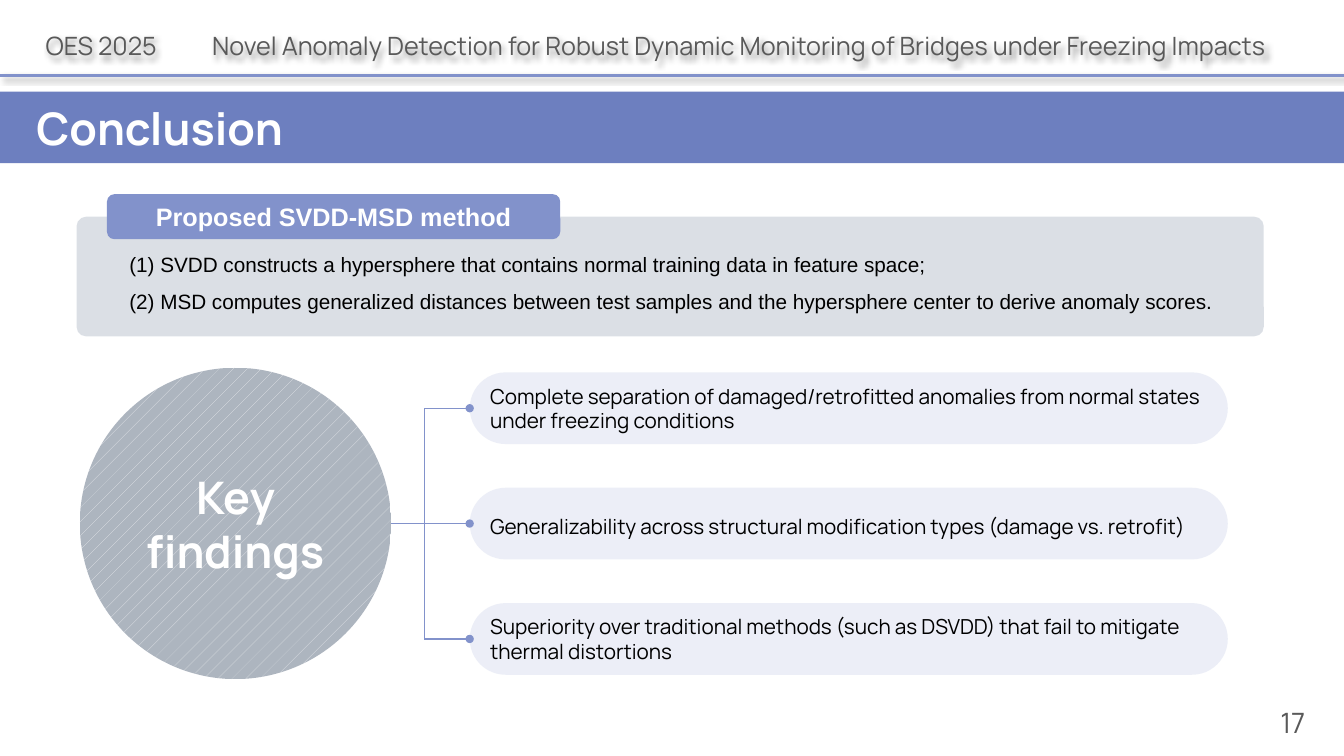
from lxml import etree
from pptx import Presentation
from pptx import util as u
from pptx.dml import color as c
from pptx.enum import dml, shapes, text
from pptx.oxml import ns

Pt = u.Pt
WHITE = c.RGBColor(0xFF, 0xFF, 0xFF)
BLACK = c.RGBColor(0x00, 0x00, 0x00)
GREY = c.RGBColor(0x59, 0x59, 0x59)
BAND = c.RGBColor(0x49, 0x60, 0xB0)
NAVY = c.RGBColor(0x10, 0x2C, 0x53)
PERIWINKLE = c.RGBColor(0x82, 0x92, 0xCB)
STRIPE = c.RGBColor(0xE4, 0xE6, 0xEA)
DISC = c.RGBColor(0xAD, 0xB5, 0xBF)

SLIDE_WIDTH = 960
PILL_LEFT, PILL_TOP, PILL_PITCH = 335.5, 266, 82.4
PILL_WIDTH, PILL_HEIGHT = 541.5, 51.2
SPINE_X = 303.1
DISC_EDGE = 270

METHOD = [
    "(1) SVDD constructs a hypersphere that contains normal training data in feature space;",
    "(2) MSD computes generalized distances between test samples and the hypersphere center "
    "to derive anomaly scores.",
]
FINDINGS = [
    ("Complete separation of damaged/retrofitted anomalies from normal states "
     "under freezing conditions", 1),
    ("Generalizability across structural modification types (damage vs. retrofit)", 1.2),
    ("Superiority over traditional methods (such as DSVDD) that fail to mitigate "
     "thermal distortions", 1),
]


def add_element(parent, tag, **attributes):
    return etree.SubElement(parent, ns.qn(tag), attributes)


def place(shape, left, top, width, height):
    shape.left, shape.top = Pt(left), Pt(top)
    shape.width, shape.height = Pt(width), Pt(height)


def fill_solid(shape, color, opacity=100):
    shape.fill.solid()
    shape.fill.fore_color.rgb = color
    if opacity < 100:
        tint = shape.element.spPr.find(ns.qn("a:solidFill"))[0]
        add_element(tint, "a:alpha", val=str(opacity * 1000))


def set_frame(shape, anchor, insets=(7.2, 3.6, 7.2, 3.6)):
    frame = shape.text_frame
    frame.auto_size = text.MSO_AUTO_SIZE.NONE
    frame.word_wrap = True
    frame.vertical_anchor = anchor
    frame.margin_left, frame.margin_top, frame.margin_right, frame.margin_bottom = map(Pt, insets)
    return frame


def format_para(para, size, color, font="Manrope", bold=False,
                align=text.PP_ALIGN.LEFT, spacing=1):
    para.alignment = align
    para.line_spacing = spacing
    para.space_before = Pt(0)
    for span in para.runs:
        span.font.name = font
        span.font.size = Pt(size)
        span.font.bold = bold
        span.font.color.rgb = color


def add_panel(page, kind, left, top, width, height, adjustment=None):
    panel = page.shapes.add_shape(kind, Pt(left), Pt(top), Pt(width), Pt(height))
    panel.shadow.inherit = False
    panel.line.fill.background()
    if adjustment is not None:
        panel.adjustments[0] = adjustment
    return panel


def add_label(page, wording, left, top, width, height, size, align, insets=(0, 0, 0, 0)):
    box = page.shapes.add_textbox(Pt(left), Pt(top), Pt(width), Pt(height))
    frame = set_frame(box, text.MSO_ANCHOR.BOTTOM, insets)
    frame.text = wording
    format_para(frame.paragraphs[0], size, GREY, align=align)
    return box


def cast_shadow(effects):
    shadow = add_element(effects, "a:outerShdw", blurRad=str(Pt(4)), dist=str(Pt(3)),
                         dir="2700000", algn="tl", rotWithShape="0")
    shade = add_element(shadow, "a:srgbClr", val="000000")
    add_element(shade, "a:alpha", val="40000")


def add_line(page, x1, y1, x2, y2, weight=1, dot=False):
    line = page.shapes.add_connector(shapes.MSO_CONNECTOR.STRAIGHT, Pt(x1), Pt(y1), Pt(x2), Pt(y2))
    line.line.color.rgb = PERIWINKLE
    line.line.width = Pt(weight)
    properties = line.element.spPr
    if dot:
        add_element(properties.find(ns.qn("a:ln")), "a:headEnd", type="oval")
    return add_element(properties, "a:effectLst")


def add_header(page):
    header = add_label(page, "OES 2025\tNovel Anomaly Detection for Robust Dynamic Monitoring "
                       "of Bridges under Freezing Impacts",
                       26.6, 10, 890, 33, 18, text.PP_ALIGN.LEFT, (6, 0, 0, 0))
    properties = header.text_frame.paragraphs[0]._p.get_or_add_pPr()
    stops = add_element(properties, "a:tabLst")
    add_element(stops, "a:tab", pos=str(Pt(119)), algn="l")
    cast_shadow(add_element(header.element.spPr, "a:effectLst"))
    cast_shadow(add_line(page, 0, 54, SLIDE_WIDTH, 54, weight=2))


def add_title(page):
    title = page.shapes.title
    place(title, 0, 65.5, SLIDE_WIDTH, 51.1)
    fill_solid(title, BAND, 80)
    frame = set_frame(title, text.MSO_ANCHOR.MIDDLE, (26, 3.6, 7.2, 3.6))
    frame.text = "Conclusion"
    format_para(frame.paragraphs[0], 32, WHITE, bold=True)


def add_method(page):
    panel = add_panel(page, shapes.MSO_SHAPE.ROUNDED_RECTANGLE, 54.7, 154.8, 848, 85.5, 0.08)
    fill_solid(panel, NAVY, 15)

    body = page.placeholders[1]
    panel.element.addnext(body.element)
    place(body, 92.4, 154.8, 805, 85.5)
    frame = set_frame(body, text.MSO_ANCHOR.MIDDLE, (0, 3.6, 0, 3.6))
    frame.text = "\n".join(METHOD)
    for para in frame.paragraphs:
        properties = para._p.get_or_add_pPr()
        properties.set("marL", "0")
        properties.set("indent", "0")
        add_element(properties, "a:buNone")
        format_para(para, 14.8, BLACK, font="Arial", spacing=1.5)

    tab = add_panel(page, shapes.MSO_SHAPE.ROUNDED_RECTANGLE, 76.4, 138.7, 323.8, 32.2)
    fill_solid(tab, PERIWINKLE)
    frame = set_frame(tab, text.MSO_ANCHOR.MIDDLE)
    frame.text = "Proposed SVDD-MSD method"
    format_para(frame.paragraphs[0], 18, WHITE, "Arial", True, text.PP_ALIGN.CENTER)


def add_pill(page, wording, spacing, top):
    pill = add_panel(page, shapes.MSO_SHAPE.ROUNDED_RECTANGLE,
                     PILL_LEFT, top, PILL_WIDTH, PILL_HEIGHT, 0.5)
    fill_solid(pill, PERIWINKLE, 15)
    frame = set_frame(pill, text.MSO_ANCHOR.MIDDLE, (7.2, 0, 7.2, 0))
    frame.text = wording
    format_para(frame.paragraphs[0], 14.8, BLACK, spacing=spacing)


def add_findings(page):
    tops = [PILL_TOP + PILL_PITCH * row for row in range(len(FINDINGS))]
    centers = [top + PILL_HEIGHT / 2 for top in tops]
    add_line(page, SPINE_X, centers[0], SPINE_X, centers[-1])
    for center, end in zip(centers, (SPINE_X, DISC_EDGE, SPINE_X)):
        add_line(page, PILL_LEFT, center, end, center, dot=True)
    for (wording, spacing), top in zip(FINDINGS, tops):
        add_pill(page, wording, spacing, top)

    disc = add_panel(page, shapes.MSO_SHAPE.OVAL, 57, 262.7, 222.4, 222.4)
    disc.fill.patterned()
    disc.fill.pattern = dml.MSO_PATTERN.PERCENT_5
    disc.fill.fore_color.rgb = STRIPE
    disc.fill.back_color.rgb = DISC
    frame = set_frame(disc, text.MSO_ANCHOR.MIDDLE)
    frame.text = "Key findings"
    format_para(frame.paragraphs[0], 32, WHITE, bold=True, align=text.PP_ALIGN.CENTER)


def main():
    deck = Presentation()
    deck.slide_width, deck.slide_height = Pt(SLIDE_WIDTH), Pt(540)
    page = deck.slides.add_slide(deck.slide_layouts[1])
    add_label(page, "17", 850.3, 499, 82.1, 28.8, 20, text.PP_ALIGN.RIGHT)
    add_header(page)
    add_title(page)
    add_method(page)
    add_findings(page)
    deck.save("out.pptx")


if __name__ == "__main__":
    main()
